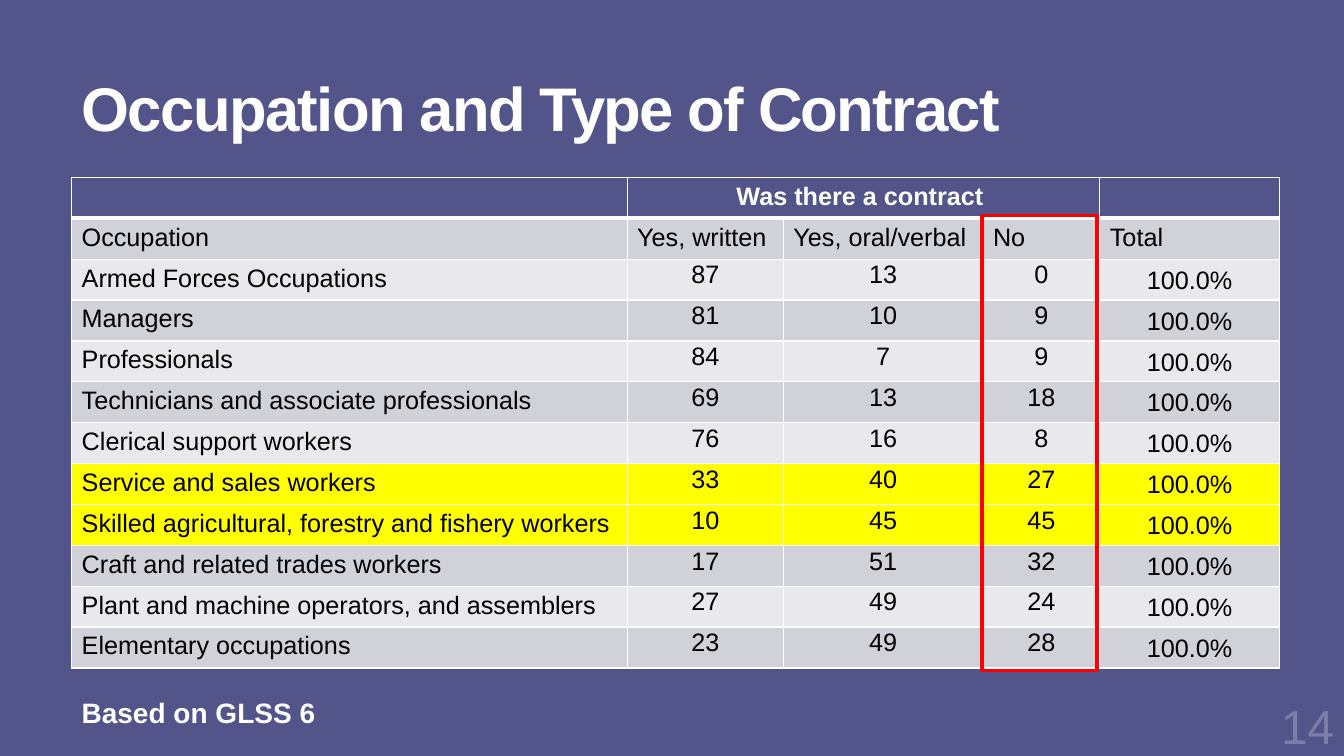
from dataclasses import dataclass

from lxml import etree
from pptx import Presentation
from pptx.dml.color import RGBColor
from pptx.enum.shapes import MSO_SHAPE
from pptx.enum.text import MSO_ANCHOR, PP_ALIGN
from pptx.oxml.ns import qn
from pptx.slide import Slide
from pptx.table import _Cell
from pptx.text.text import TextFrame
from pptx.util import Inches, Pt

LEFT, CENTER, RIGHT = PP_ALIGN.LEFT, PP_ALIGN.CENTER, PP_ALIGN.RIGHT
TOP, MIDDLE = MSO_ANCHOR.TOP, MSO_ANCHOR.MIDDLE
RECT = MSO_SHAPE.RECTANGLE

WIDTH, HEIGHT = Inches(13.33), Inches(7.5)
FONT = "Arial"
PURPLE, WHITE, BLACK = "53548A", "FFFFFF", "000000"
BANDS = ("E9E9ED", "D1D1DA")
YELLOW, RED, MUTED = "FFFF00", "FF0000", "7C7DA8"


@dataclass(frozen=True)
class Box:
    """A frame in percent of the slide's width and height."""

    left: float
    top: float
    width: float
    height: float

    def frame(self) -> tuple[int, int, int, int]:
        """Give the frame as slide lengths."""
        return wide(self.left), high(self.top), wide(self.width), high(self.height)


@dataclass(frozen=True)
class Label:
    """A free line of text."""

    text: str
    box: Box
    size: float
    color: str = WHITE
    bold: bool = True
    align: int = LEFT
    anchor: int = TOP
    wrap: bool = True
    lead: float = 1.0
    track: int = 0


@dataclass(frozen=True)
class Job:
    """One occupation and its shares by type of contract."""

    name: str
    written: int
    oral: int
    none: int
    marked: bool = False


GRID = Box(5.33, 23.47, 89.87, 64.93)
COLUMNS = (41.33, 11.63, 14.85, 8.7, 13.35)
HEADS = ("Occupation", "Yes, written", "Yes, oral/verbal", "No", "Total")
FOCUS = Box(73.07, 28.53, 8.55, 60.13)
JOBS = (
    Job("Armed Forces Occupations", 87, 13, 0),
    Job("Managers", 81, 10, 9),
    Job("Professionals", 84, 7, 9),
    Job("Technicians and associate professionals", 69, 13, 18),
    Job("Clerical support workers", 76, 16, 8),
    Job("Service and sales workers", 33, 40, 27, True),
    Job("Skilled agricultural, forestry and fishery workers", 10, 45, 45, True),
    Job("Craft and related trades workers", 17, 51, 32),
    Job("Plant and machine operators, and assemblers", 27, 49, 24),
    Job("Elementary occupations", 23, 49, 28),
)
LABELS = (
    Label("Occupation and Type of Contract", Box(5.33, 2.8, 88.37, 24.13), 44,
          anchor=MIDDLE, lead=0.85, track=-120),
    Label("Based on GLSS 6", Box(5.33, 91.33, 19.05, 5.87), 20, wrap=False),
    Label("14", Box(90, 91.9, 10, 8), 34, MUTED, False, RIGHT, MIDDLE),
)


def wide(share: float) -> int:
    """Turn a percentage of the slide's width into a length."""
    return round(WIDTH * share / 100)


def high(share: float) -> int:
    """Turn a percentage of the slide's height into a length."""
    return round(HEIGHT * share / 100)


def paint(code: str) -> RGBColor:
    """Turn a hex string into a colour."""
    return RGBColor.from_string(code)


def write(frame: TextFrame, text: str, size: float, color: str, bold: bool,
          align: int = LEFT, lead: float = 1.0) -> None:
    """Set one paragraph of text and its format."""
    frame.text = text
    line = frame.paragraphs[0]
    line.alignment, line.line_spacing = align, lead
    for run in line.runs:
        font = run.font
        font.name, font.size, font.bold = FONT, Pt(size), bold
        font.color.rgb = paint(color)


def add_label(slide: Slide, label: Label) -> None:
    """Draw a free line of text."""
    frame = slide.shapes.add_textbox(*label.box.frame()).text_frame
    frame.word_wrap, frame.vertical_anchor = label.wrap, label.anchor
    write(frame, label.text, label.size, label.color, label.bold, label.align, label.lead)
    if label.track:
        for run in frame.paragraphs[0].runs:
            run.font._element.set("spc", str(label.track))


def edge(cell: _Cell, row: int) -> None:
    """Rule a cell in white, with a thick line below the header."""
    heavy = {0: "lnB", 1: "lnT"}.get(row)
    props = cell._tc.get_or_add_tcPr()
    for index, side in enumerate(("lnL", "lnR", "lnT", "lnB")):
        line = etree.Element(qn(f"a:{side}"), w=str(Pt(3 if side == heavy else 1)))
        fill = etree.SubElement(line, qn("a:solidFill"))
        etree.SubElement(fill, qn("a:srgbClr"), val=WHITE)
        props.insert(index, line)


def fill_cell(cell: _Cell, text: str, row: int, col: int, shade: str) -> None:
    """Fill, rule and write one table cell."""
    cell.fill.solid()
    cell.fill.fore_color.rgb = paint(shade)
    edge(cell, row)
    value = row > 1 and col > 0
    if value:
        last = col == len(COLUMNS) - 1
        cell.margin_left = cell.margin_right = Inches(0.06 if last else 0.07)
        cell.margin_top = cell.margin_bottom = 0
        cell.vertical_anchor = MIDDLE if last else TOP
    head = row == 0
    write(cell.text_frame, text, 18, WHITE if head else BLACK, head,
          CENTER if head or value else LEFT, 1.07 if value else 1.0)


def add_grid(slide: Slide) -> None:
    """Draw the table of contracts by occupation."""
    rows = [("", "Was there a contract ", "", "", ""), HEADS]
    rows += [(job.name, str(job.written), str(job.oral), str(job.none), "100.0%")
             for job in JOBS]
    shades = [PURPLE, BANDS[1]]
    shades += [YELLOW if job.marked else BANDS[i % 2] for i, job in enumerate(JOBS)]
    table = slide.shapes.add_table(len(rows), len(COLUMNS), *GRID.frame()).table
    for column, share in zip(table.columns, COLUMNS):
        column.width = wide(share)
    for row, (texts, shade) in enumerate(zip(rows, shades)):
        table.rows[row].height = high(GRID.height / len(rows))
        for col, text in enumerate(texts):
            fill_cell(table.cell(row, col), text, row, col, shade)
    table.cell(0, 1).merge(table.cell(0, 3))


def add_focus(slide: Slide) -> None:
    """Outline the column of workers without a contract."""
    shape = slide.shapes.add_shape(RECT, *FOCUS.frame())
    shape.shadow.inherit = False
    shape.fill.background()
    shape.line.color.rgb = paint(RED)
    shape.line.width = Pt(2.25)


def main() -> None:
    """Build and save the slide."""
    deck = Presentation()
    deck.slide_width, deck.slide_height = WIDTH, HEIGHT
    slide = deck.slides.add_slide(deck.slide_layouts[6])
    slide.background.fill.solid()
    slide.background.fill.fore_color.rgb = paint(PURPLE)
    add_grid(slide)
    add_focus(slide)
    for label in LABELS:
        add_label(slide, label)
    deck.save("out.pptx")


if __name__ == "__main__":
    main()
